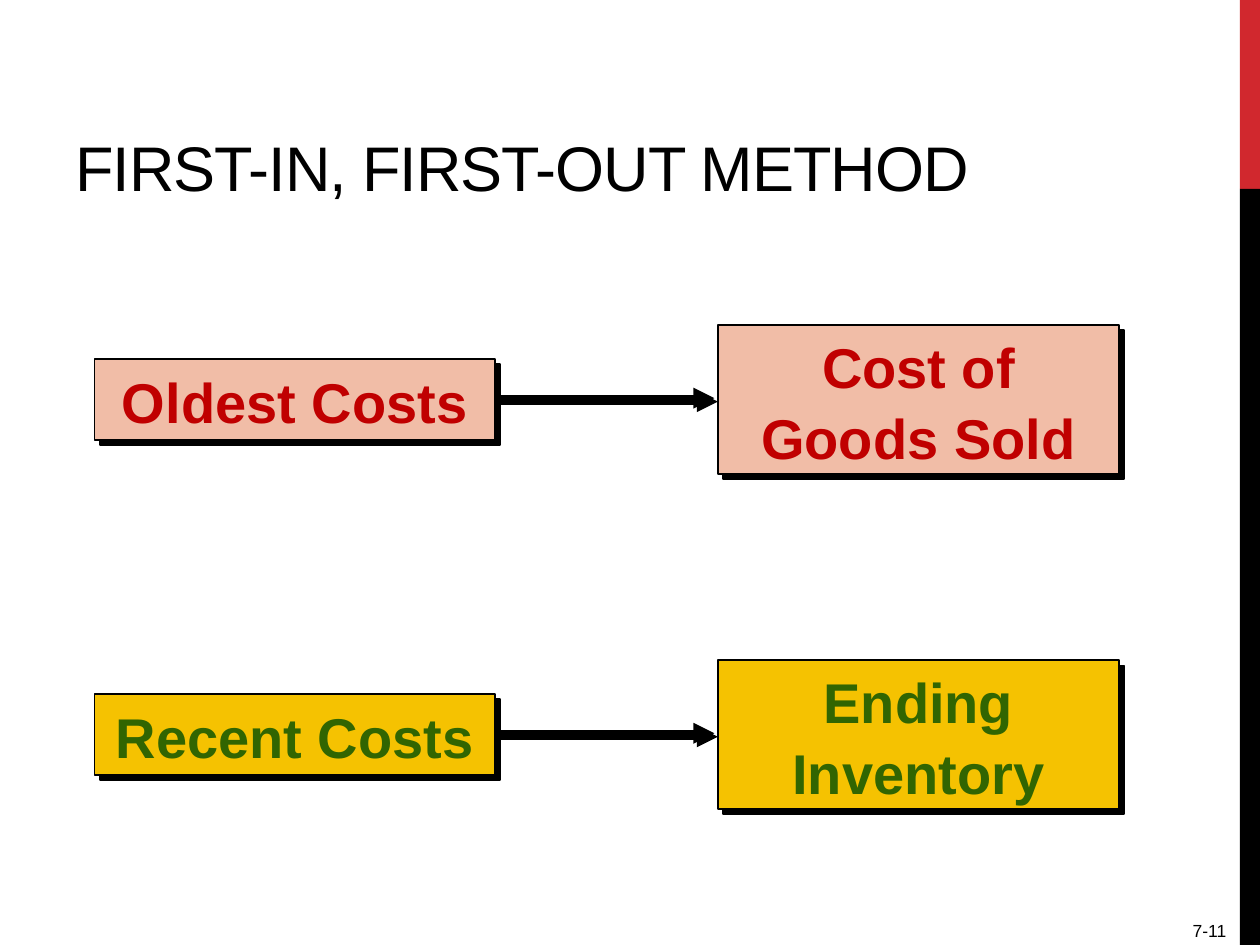
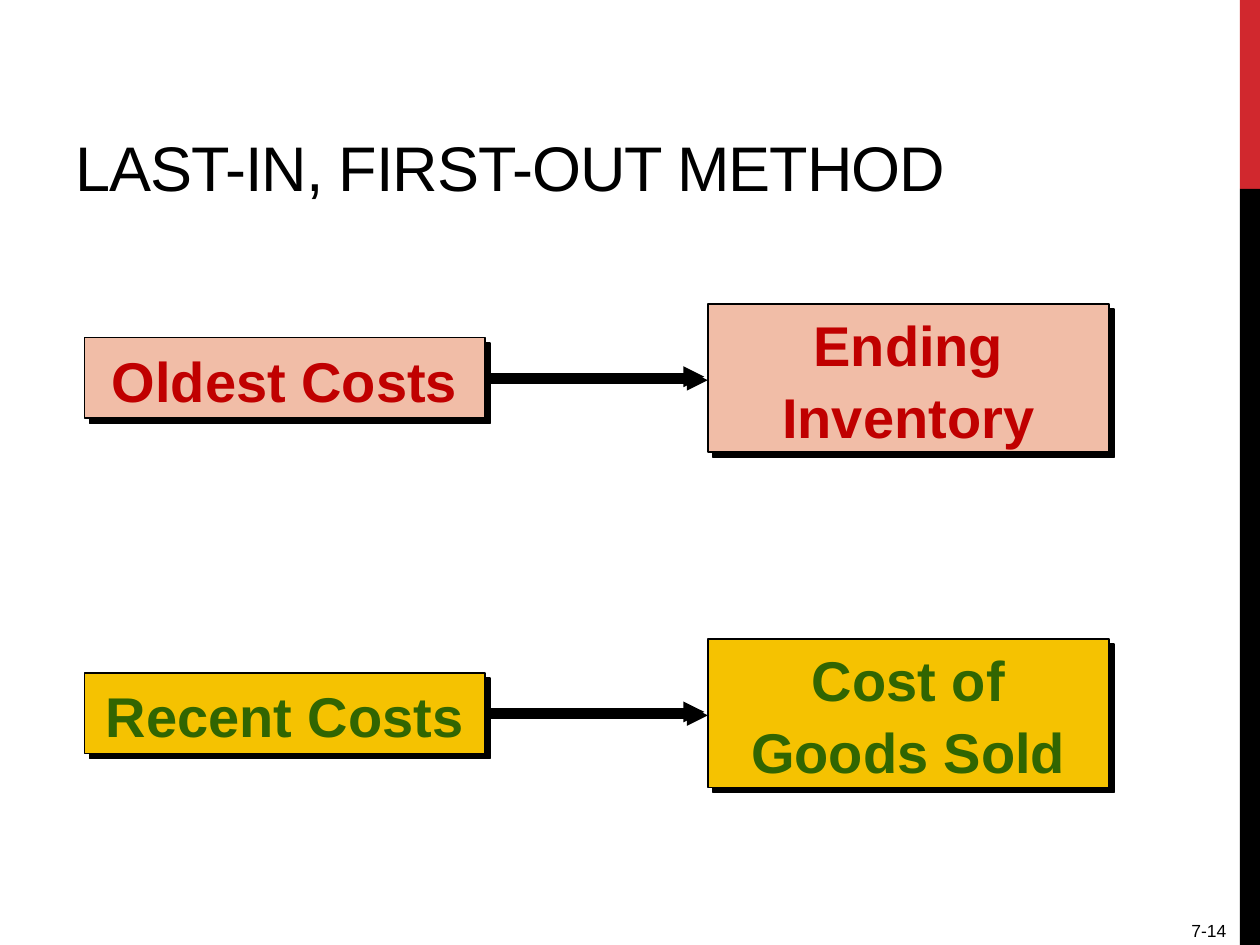
"""Build two slides that contrast the FIFO and LIFO cost flows."""
from dataclasses import dataclass

from lxml.etree import SubElement
from pptx import Presentation
from pptx.dml.color import RGBColor
from pptx.enum.shapes import MSO_CONNECTOR, MSO_SHAPE
from pptx.enum.text import MSO_ANCHOR, PP_ALIGN
from pptx.oxml.ns import qn
from pptx.util import Inches, Pt


@dataclass(frozen=True)
class Theme:
    black: RGBColor = RGBColor.from_string("000000")
    accent: RGBColor = RGBColor.from_string("D1282E")
    oldest_fill: RGBColor = RGBColor.from_string("F1BDA7")
    oldest_text: RGBColor = RGBColor.from_string("C00000")
    recent_fill: RGBColor = RGBColor.from_string("F5C201")
    recent_text: RGBColor = RGBColor.from_string("316501")
    font: str = "Arial"
    title_size: int = 36
    box_size: int = 32
    number_size: int = 10


theme = Theme()


def write_text(shape, text, size, color, anchor, paragraph_format, bold=False):
    frame = shape.text_frame
    frame.word_wrap = True
    frame.vertical_anchor = anchor
    paragraph = frame.paragraphs[0]
    for name, value in paragraph_format.items():
        setattr(paragraph, name, value)
    run = paragraph.add_run()
    run.text = text
    for name, value in {"name": theme.font, "size": Pt(size), "bold": bold}.items():
        setattr(run.font, name, value)
    run.font.color.rgb = color
    return run


def add_hard_shadow(shape, distance):
    properties = shape._element.spPr
    effects = properties.find(qn("a:effectLst"))
    if effects is None:
        effects = SubElement(properties, qn("a:effectLst"))
    shadow = SubElement(effects, qn("a:outerShdw"), dist=str(int(Pt(distance))),
                        dir="2700000", algn="ctr", rotWithShape="0")
    SubElement(shadow, qn("a:srgbClr"), val=str(theme.black))


presentation = Presentation()
for name, value in {"slide_width": Inches(10), "slide_height": Inches(7.5)}.items():
    setattr(presentation, name, value)

side_bands = [(0, 1.5, theme.accent), (1.5, 6, theme.black)]
row_colors = [(theme.oldest_fill, theme.oldest_text), (theme.recent_fill, theme.recent_text)]
sources = ["Oldest Costs", "Recent Costs"]
methods = [
    ("FIRST-IN, FIRST-OUT METHOD", "7-11", 0.75, 3.17, ["Cost of Goods Sold", "Ending Inventory"]),
    ("LAST-IN, FIRST-OUT METHOD", "7-14", 0.67, 3, ["Ending Inventory", "Cost of Goods Sold"]),
]
box_width, source_height, target_height = 3.18, 0.64, 1.18
target_offset, row_pitch = 4.95, 2.66
arrow_start, arrow_end = 3.08, 4.92
box_format = {"alignment": PP_ALIGN.CENTER, "line_spacing": 1.06}

for title, number, left, first_center, targets in methods:
    slide = presentation.slides.add_slide(presentation.slide_layouts[6])

    for top, height, color in side_bands:
        band = slide.shapes.add_shape(MSO_SHAPE.RECTANGLE, Inches(9.84), Inches(top),
                                      Inches(0.16), Inches(height))
        band.shadow.inherit = False
        band.fill.solid()
        band.fill.fore_color.rgb = color
        band.line.fill.background()

    number_box = slide.shapes.add_textbox(Inches(8.75), Inches(7.25), Inches(1.08), Inches(0.27))
    write_text(number_box, number, theme.number_size, theme.black, MSO_ANCHOR.TOP,
               {"alignment": PP_ALIGN.RIGHT})
    title_box = slide.shapes.add_textbox(Inches(0.5), Inches(0.17), Inches(9.17), Inches(1.5))
    title_run = write_text(title_box, title, theme.title_size, theme.black, MSO_ANCHOR.BOTTOM,
                           {"alignment": PP_ALIGN.LEFT})
    title_run.font._element.set("spc", "-60")

    for row, (source, target, (fill, text_color)) in enumerate(zip(sources, targets, row_colors)):
        center = first_center + row * row_pitch

        arrow = slide.shapes.add_connector(
            MSO_CONNECTOR.STRAIGHT, Inches(left + arrow_start), Inches(center - 0.01),
            Inches(left + arrow_end), Inches(center - 0.01))
        arrow.line.width = Pt(4)
        arrow.line.color.rgb = theme.black
        SubElement(arrow.line._get_or_add_ln(), qn("a:tailEnd"), type="triangle")
        add_hard_shadow(arrow, 2.8)

        for text, box_left, height in [(target, left + target_offset, target_height),
                                       (source, left, source_height)]:
            box = slide.shapes.add_shape(MSO_SHAPE.RECTANGLE, Inches(box_left),
                                         Inches(center - height / 2),
                                         Inches(box_width), Inches(height))
            box.shadow.inherit = False
            box.fill.solid()
            box.fill.fore_color.rgb = fill
            box.line.color.rgb = theme.black
            box.line.width = Pt(1)
            add_hard_shadow(box, 4.2)
            write_text(box, text, theme.box_size, text_color, MSO_ANCHOR.MIDDLE, box_format, True)

presentation.save("out.pptx")
